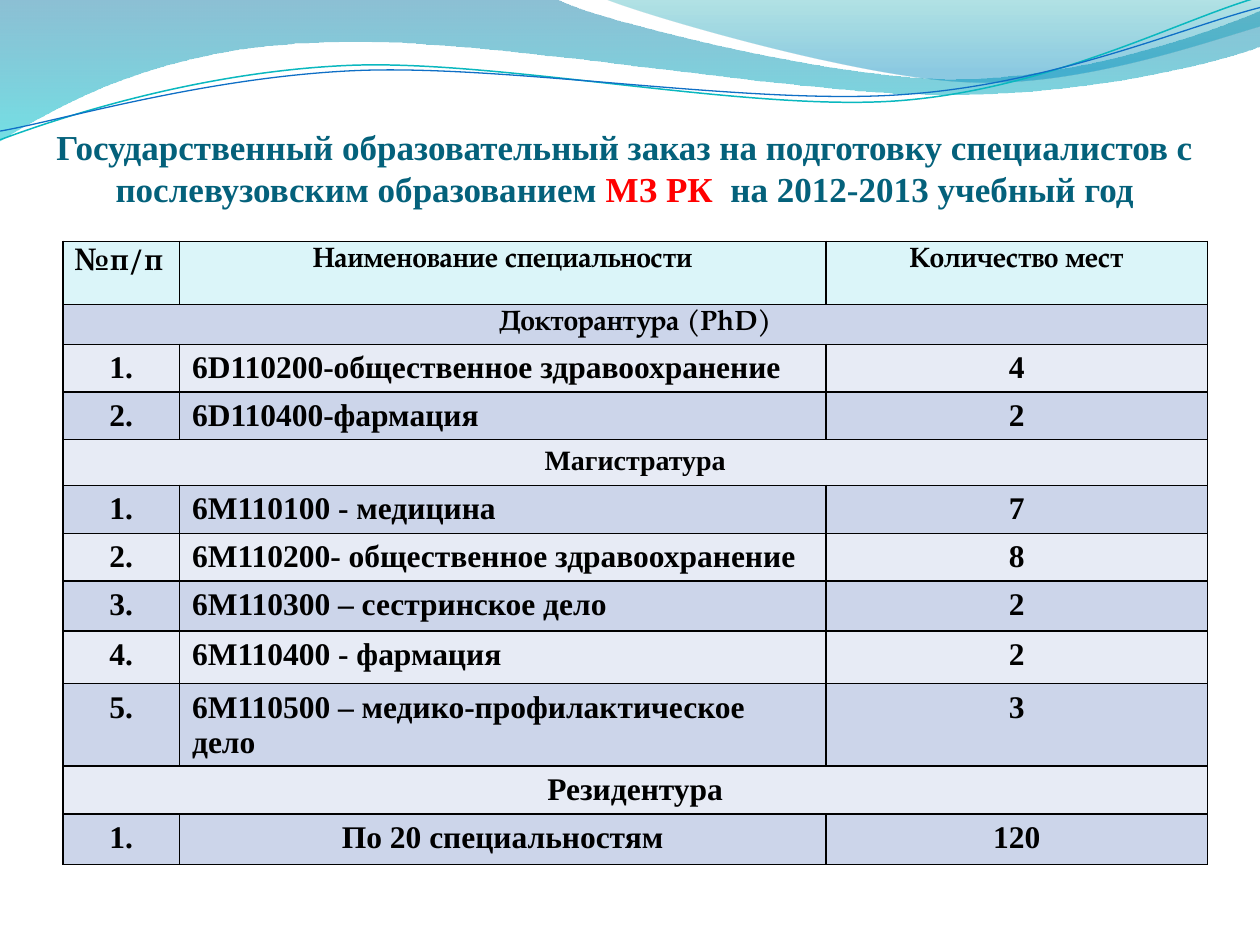
from lxml.etree import SubElement
from pptx import Presentation
from pptx.dml.color import RGBColor
from pptx.enum.text import MSO_ANCHOR as Anchor, MSO_AUTO_SIZE as AutoSize, PP_ALIGN as Align
from pptx.oxml import parse_xml
from pptx.oxml.ns import nsdecls, qn
from pptx.util import Pt


def color(value):
    return RGBColor.from_string(value)


def draw_wave(shapes, start, segments, closed):
    builder = shapes.build_freeform(Pt(start[0]), Pt(start[1]))
    points = [(Pt(x), Pt(y)) for segment in segments for x, y in segment]
    builder.add_line_segments(points, close=closed)
    shape = builder.convert_to_shape()
    shape.shadow.inherit = False
    lines = iter(shape.element.findall(".//" + qn("a:lnTo")))
    for segment in segments:
        first, *others = [next(lines) for point in segment]
        if others:
            bezier = parse_xml(f'<a:cubicBezTo {nsdecls("a")}/>')
            first.addprevious(bezier)
            for line in (first, *others):
                bezier.append(line[0])
                line.getparent().remove(line)
    return shape


presentation = Presentation()
presentation.slide_width, presentation.slide_height = Pt(720), Pt(540)
slide = presentation.slides.add_slide(presentation.slide_layouts[5])

bands = [
    ((0, 0), [
        [(317, -1)],
        [(343, 12), (478, 45), (546, 45)],
        [(614, 45), (690, 19), (720, 6)],
        [(721, 26)],
        [(708, 32), (626, 55), (537, 54)],
        [(448, 54), (275, 20), (185, 24)],
        [(93, 26), (33, 60), (-1, 81)],
    ], [(0, "0074A1", 45), (1, "00C6CF", 55)]),
    ((345, -1), [
        [(366, 8), (491, 45), (554, 47)],
        [(617, 50), (692, 23), (720, 15)],
        [(720, 0)],
    ], [(0, "00A1A9", 30), (0.8, "008BBF", 45)]),
]
for start, segments, stops in bands:
    band = draw_wave(slide.shapes, start, segments, True)
    band.line.fill.background()
    band.fill.gradient()
    band.fill.gradient_angle = 270
    for stop, (position, value, opacity) in zip(band.fill.gradient_stops, stops):
        stop.position = position
        stop.color.rgb = color(value)
    color_elements = band.element.spPr.findall(".//" + qn("a:srgbClr"))
    for element, (position, value, opacity) in zip(color_elements, stops):
        SubElement(element, qn("a:alpha"), val=str(opacity * 1000))

curves = [
    ((0, 79.9), [
        [(34.6, 67), (113.8, 41), (199.4, 37.4)],
        [(284.4, 33.8), (427, 64), (513.4, 57.6)],
        [(599.8, 51.1), (675.4, 10.8), (718.6, -1.4)],
    ], "0AB8BF", 0.85),
    ((0, 74.9), [
        [(33.8, 69.1), (118.1, 43.9), (203.8, 40.3)],
        [(290.2, 36.7), (429.8, 60.5), (516.2, 54)],
        [(601.9, 48.2), (677.5, 15.1), (720, 4.3)],
    ], "0F6FC6", 0.75),
]
for start, segments, value, width in curves:
    curve = draw_wave(slide.shapes, start, segments, False)
    curve.fill.background()
    curve.line.color.rgb = color(value)
    curve.line.width = Pt(width)

title = slide.shapes.title
title.element.getparent().append(title.element)
title.left, title.top, title.width, title.height = Pt(30), Pt(66), Pt(654), Pt(54)
frame = title.text_frame
frame.auto_size = AutoSize.NONE
frame.word_wrap = True
frame.vertical_anchor = Anchor.BOTTOM
frame.margin_left = frame.margin_right = frame.margin_bottom = 0
frame.margin_top = Pt(3.6)
paragraph = frame.paragraphs[0]
paragraph.alignment = Align.CENTER
for text, value in [
    ("Государственный образовательный заказ на подготовку специалистов с послевузовским образованием ", "04617B"),
    ("МЗ РК ", "FF0000"),
    (" на 2012-2013 учебный год", "04617B"),
]:
    run = paragraph.add_run()
    run.text = text
    run.font.name, run.font.size, run.font.bold = "Times New Roman", Pt(20), True
    run.font.color.rgb = color(value)

rows = [
    ("№п/п", "Наименование специальности", "Количество мест"),
    ("Докторантура (PhD)",),
    ("1.", "6D110200-общественное здравоохранение", "4"),
    ("2.", "6D110400-фармация", "2"),
    ("Магистратура",),
    ("1.", "6М110100 - медицина", "7"),
    ("2.", "6М110200- общественное здравоохранение", "8"),
    ("3.", "6М110300 – сестринское дело", "2"),
    ("4.", "6М110400 - фармация", "2"),
    ("5.", "6М110500 – медико-профилактическое дело", "3"),
    ("Резидентура",),
    ("1.", "По 20 специальностям", "120"),
]
row_heights = [36, 22.8, 27, 27, 26.3, 27.4, 27.2, 28.6, 30.2, 46.8, 27.4, 28.9]
column_widths = [66.6, 369.4, 218]
table = slide.shapes.add_table(
    len(rows), 3, Pt(36), Pt(138), Pt(sum(column_widths)), Pt(sum(row_heights))).table
for column, width in zip(table.columns, column_widths):
    column.width = Pt(width)
for row, height in zip(table.rows, row_heights):
    row.height = Pt(height)

for row_index, texts in enumerate(rows):
    if len(texts) == 1:
        table.cell(row_index, 0).merge(table.cell(row_index, 2))
    fill = "DBF5F9" if row_index == 0 else ("E7EBF5", "CCD5EA")[row_index % 2]
    for column_index in range(3):
        cell = table.cell(row_index, column_index)
        for side in ("lnL", "lnR", "lnT", "lnB"):
            cell._tc.get_or_add_tcPr().append(parse_xml(
                f'<a:{side} {nsdecls("a")} w="12700"><a:solidFill>'
                f'<a:srgbClr val="000000"/></a:solidFill></a:{side}>'))
        cell.fill.solid()
        cell.fill.fore_color.rgb = color(fill)
        if row_index < 2:
            cell.margin_top, cell.margin_bottom = Pt(3.6), 0
        if column_index >= len(texts):
            continue
        cell.text_frame.text = texts[column_index]
        paragraph = cell.text_frame.paragraphs[0]
        is_number_heading = row_index == 0 and column_index == 0
        is_specialty = column_index == 1 and 0 < row_index < len(rows) - 1
        paragraph.alignment = Align.LEFT if is_number_heading or is_specialty else Align.CENTER
        font = paragraph.runs[0].font
        font.name = "TeX Gyre Pagella" if row_index < 2 else "Times New Roman"
        font.size = Pt(16 if row_index in (0, 1, 4) and not is_number_heading else 18)
        font.bold = True
        font.color.rgb = color("000000")

presentation.save("out.pptx")
